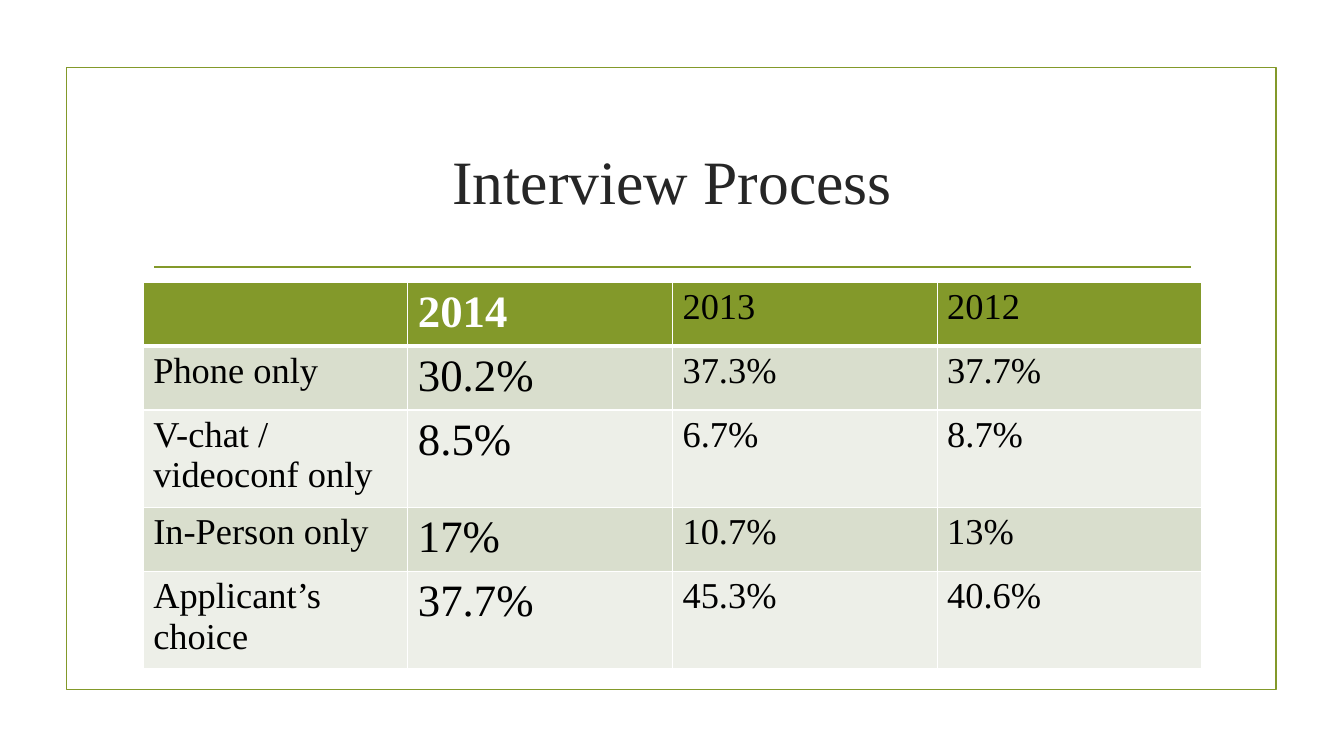
from lxml import etree
from pptx import Presentation
from pptx import util as u
from pptx.dml.color import RGBColor
from pptx.enum import shapes, text
from pptx.oxml import ns

GREEN = RGBColor(0x83, 0x99, 0x2A)
DARK = RGBColor(0x26, 0x26, 0x26)
BLACK = RGBColor(0, 0, 0)
WHITE = RGBColor(0xFF, 0xFF, 0xFF)
BANDS = (RGBColor(0xD9, 0xDE, 0xCD), RGBColor(0xED, 0xEF, 0xE8))

ROWS = [
    ("", "2014", "2013", "2012"),
    ("Phone only", "30.2%", "37.3%", "37.7%"),
    ("V-chat / videoconf only", "8.5%", "6.7%", "8.7%"),
    ("In-Person only", "17%", "10.7%", "13%"),
    ("Applicant’s choice", "37.7%", "45.3%", "40.6%"),
]
ROW_HEIGHTS = (0.59, 0.59, 0.9, 0.6, 0.9)
HIGHLIGHT_COLUMN = 1


class SlideBuilder:
    font_name = "Times New Roman"
    line_width = u.Pt(1.25)

    def __init__(self, slide):
        self.slide = slide

    def style(self, paragraph, size, color, bold=False):
        font = paragraph.font
        font.name, font.size, font.bold = self.font_name, u.Pt(size), bold
        font.color.rgb = color

    def frame(self, left, top, width, height):
        shape = self.slide.shapes.add_shape(
            shapes.MSO_SHAPE.RECTANGLE, *map(u.Inches, (left, top, width, height)))
        shape.shadow.inherit = False
        shape.fill.background()
        shape.line.color.rgb = GREEN
        shape.line.width = self.line_width

    def rule(self, left, right, y):
        line = self.slide.shapes.add_connector(
            shapes.MSO_CONNECTOR.STRAIGHT, *map(u.Inches, (left, y, right, y)))
        line.line.color.rgb = GREEN
        line.line.width = self.line_width
        etree.SubElement(line._element.spPr, ns.qn("a:effectLst"))

    def title(self, wording, left, top, width, height):
        box = self.slide.shapes.add_textbox(*map(u.Inches, (left, top, width, height)))
        frame = box.text_frame
        frame.word_wrap = True
        frame.vertical_anchor = text.MSO_ANCHOR.MIDDLE
        paragraph = frame.paragraphs[0]
        paragraph.text = wording
        paragraph.alignment = text.PP_ALIGN.CENTER
        self.style(paragraph, 44, DARK)

    def borders(self, cell, bottom):
        properties = cell._tc.get_or_add_tcPr()
        for side, points in (("L", 1), ("R", 1), ("T", 1), ("B", bottom)):
            line = etree.SubElement(properties, ns.qn(f"a:ln{side}"), w=str(u.Pt(points)))
            fill = etree.SubElement(line, ns.qn("a:solidFill"))
            etree.SubElement(fill, ns.qn("a:srgbClr"), val=str(WHITE))

    def table(self, rows, heights, left, top, width):
        table = self.slide.shapes.add_table(
            len(rows), len(rows[0]),
            *map(u.Inches, (left, top, width, sum(heights)))).table
        for row_index, (values, height) in enumerate(zip(rows, heights)):
            table.rows[row_index].height = u.Inches(height)
            header = row_index == 0
            for column_index, value in enumerate(values):
                cell = table.cell(row_index, column_index)
                # Borders come before the fill in the cell properties
                self.borders(cell, 3 if header else 1)
                cell.fill.solid()
                cell.fill.fore_color.rgb = GREEN if header else BANDS[(row_index - 1) % 2]
                highlight = column_index == HIGHLIGHT_COLUMN
                paragraph = cell.text_frame.paragraphs[0]
                paragraph.text = value
                self.style(paragraph, 32 if highlight else 26,
                           WHITE if header and highlight else BLACK,
                           bold=header and highlight)


def main():
    presentation = Presentation()
    presentation.slide_width = u.Inches(13.33)
    presentation.slide_height = u.Inches(7.5)
    builder = SlideBuilder(presentation.slides.add_slide(presentation.slide_layouts[6]))

    # Frame and heading
    builder.frame(0.66, 0.67, 12, 6.17)
    builder.rule(1.53, 11.81, 2.65)
    builder.title("Interview Process", 1.42, 1.07, 10.5, 1.43)

    # Interview formats by year
    builder.table(ROWS, ROW_HEIGHTS, 1.42, 2.8, 10.5)

    presentation.save("out.pptx")


if __name__ == "__main__":
    main()
